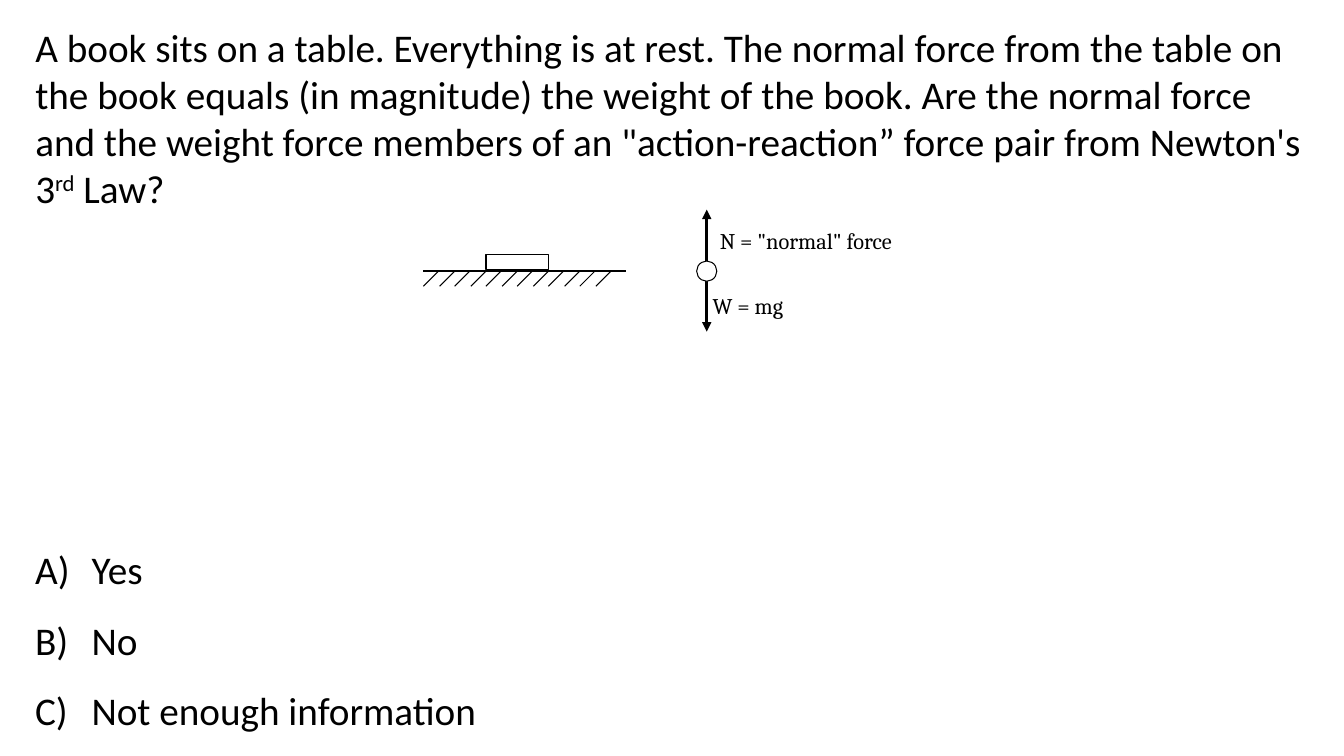
from lxml import etree
from pptx import Presentation
from pptx.dml.color import RGBColor
from pptx.enum.shapes import MSO_CONNECTOR, MSO_SHAPE
from pptx.enum.text import MSO_ANCHOR, MSO_AUTO_SIZE, PP_ALIGN
from pptx.oxml.ns import qn
from pptx.util import Pt

PX = 9144  # EMU; 100 px to the inch
STRAIGHT = MSO_CONNECTOR.STRAIGHT
RECTANGLE, OVAL = MSO_SHAPE.RECTANGLE, MSO_SHAPE.OVAL
TOP, LEFT = MSO_ANCHOR.TOP, PP_ALIGN.LEFT
FIXED = MSO_AUTO_SIZE.NONE
COLORS = {"ink": "000000", "paper": "FFFFFF"}
QUESTION = [
    ("A book sits on a table. Everything is at rest. The normal force from the table on "
     "the book equals (in magnitude) the weight of the book. Are the normal force and the "
     "weight force members of an \"action-reaction” force pair from Newton's 3", False),
    ("rd", True),
    (" Law?", False),
]
ANSWERS = ["Yes", "No", "Not enough information"]
MAIN_FONT = {"name": "Calibri", "size": Pt(28)}
LABEL_FONT = {"name": "Cambria", "size": Pt(16)}
HATCH_COUNT, HATCH_FIRST, HATCH_LAST, HATCH_SIZE = 12, 435, 606, 15
TABLE_TOP = 269
FORCE_X = 701


def emu(*lengths):
    return [length * PX for length in lengths]


def rgb(name):
    return RGBColor.from_string(COLORS[name])


def apply(target, formats):
    for attribute, value in formats.items():
        setattr(target, attribute, value)


def add_run(paragraph, text, font_formats):
    run = paragraph.add_run()
    run.text = text
    apply(run.font, font_formats)
    run.font.color.rgb = rgb("ink")
    return run


def add_line(shapes, start, end, width, arrow=False):
    line = shapes.add_connector(STRAIGHT, *emu(*start, *end))
    line.line.width = Pt(width)
    line.line.color.rgb = rgb("ink")
    if arrow:
        etree.SubElement(line.line._get_or_add_ln(), qn("a:tailEnd"), type="triangle")
    etree.SubElement(line._element.spPr, qn("a:effectLst"))


def add_body(shapes, kind, box):
    """Add an outlined, paper-coloured object of the diagram."""
    body = shapes.add_shape(kind, *emu(*box))
    body.shadow.inherit = False
    body.fill.solid()
    body.fill.fore_color.rgb = rgb("paper")
    body.line.color.rgb = rgb("ink")
    body.line.width = Pt(0.75)


def add_label(shapes, text, box):
    label = shapes.add_textbox(*emu(*box))
    apply(label.text_frame, {"word_wrap": True, "auto_size": FIXED})
    add_run(label.text_frame.paragraphs[0], text, LABEL_FONT)


def add_question(slide):
    title = slide.shapes.title
    apply(title, dict(zip(("left", "top", "width", "height"), emu(25, 18, 1292, 199))))
    apply(title.text_frame, {"word_wrap": True, "auto_size": FIXED, "vertical_anchor": TOP})
    paragraph = title.text_frame.paragraphs[0]
    paragraph.alignment = LEFT
    for text, raised in QUESTION:
        run = add_run(paragraph, text, MAIN_FONT)
        if raised:
            run.font._element.set("baseline", "30000")


def add_book_on_table(slide):
    shapes = slide.shapes.add_group_shape().shapes
    add_body(shapes, RECTANGLE, (482, 252, 62, 15))
    add_line(shapes, (420, TABLE_TOP), (621, TABLE_TOP), 1.25)
    for index in range(HATCH_COUNT):
        x = round(HATCH_FIRST + index * (HATCH_LAST - HATCH_FIRST) / (HATCH_COUNT - 1))
        add_line(shapes, (x, TABLE_TOP), (x - HATCH_SIZE, TABLE_TOP + HATCH_SIZE), 0.75)


def add_force_diagram(slide):
    shapes = slide.shapes.add_group_shape().shapes
    for tip in (329, 208):
        add_line(shapes, (FORCE_X, TABLE_TOP), (FORCE_X, tip), 2.25, arrow=True)
    add_body(shapes, OVAL, (FORCE_X - 10, TABLE_TOP - 10, 20, 20))
    add_label(shapes, "W = mg", (697, 285, 96, 40))
    add_label(shapes, 'N = "normal" force', (704, 220, 218, 31))


def add_answers(slide):
    answers = slide.shapes.add_textbox(*emu(25, 513, 463, 222))
    frame = answers.text_frame
    apply(frame, {"word_wrap": False, "auto_size": FIXED})
    for index, answer in enumerate(ANSWERS):
        paragraph = frame.add_paragraph() if index else frame.paragraphs[0]
        apply(paragraph, {"line_spacing": 1.5, "alignment": LEFT})
        properties = paragraph._p.get_or_add_pPr()
        properties.set("marL", str(56 * PX))
        properties.set("indent", str(-56 * PX))
        etree.SubElement(properties, qn("a:buFont"), typeface="+mj-lt")
        etree.SubElement(properties, qn("a:buAutoNum"), type="alphaUcParenR")
        add_run(paragraph, answer, MAIN_FONT)


def main():
    presentation = Presentation()
    apply(presentation, dict(zip(("slide_width", "slide_height"), emu(1333, 750))))
    slide = presentation.slides.add_slide(presentation.slide_layouts.get_by_name("Title Only"))
    add_question(slide)
    add_book_on_table(slide)
    add_force_diagram(slide)
    add_answers(slide)
    presentation.save("out.pptx")


if __name__ == "__main__":
    main()
